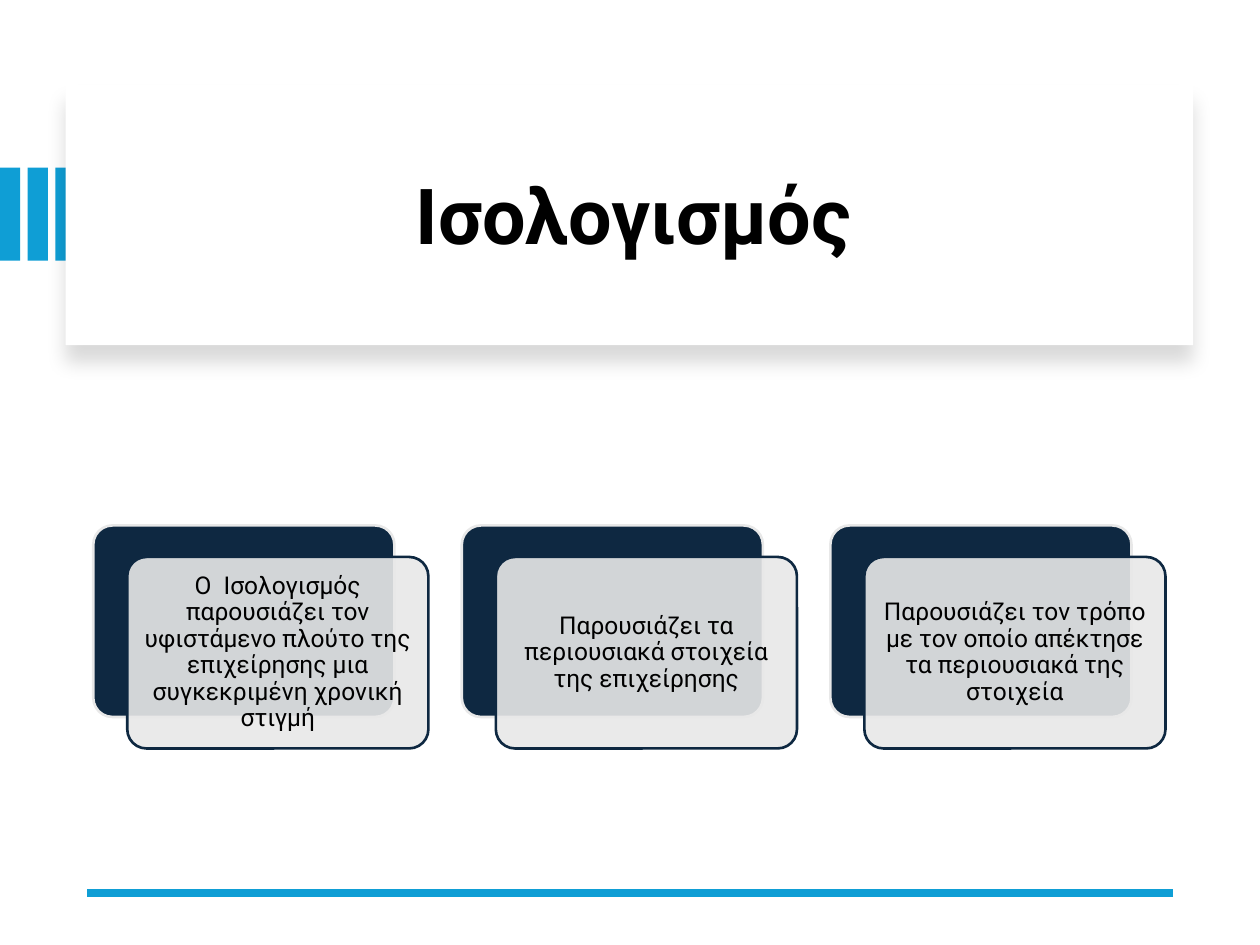
from typing import NamedTuple

from lxml import etree
from pptx import Presentation
from pptx.dml.color import RGBColor
from pptx.enum.shapes import MSO_CONNECTOR, MSO_SHAPE
from pptx.enum.text import MSO_ANCHOR, MSO_AUTO_SIZE, PP_ALIGN
from pptx.oxml.ns import qn
from pptx.util import Inches, Pt

RECT, ROUND = MSO_SHAPE.RECTANGLE, MSO_SHAPE.ROUNDED_RECTANGLE
STRAIGHT = MSO_CONNECTOR.STRAIGHT
MIDDLE, CENTER = MSO_ANCHOR.MIDDLE, PP_ALIGN.CENTER
NO_FIT = MSO_AUTO_SIZE.NONE

FONT = "Roboto"
BLUE, NAVY, GRAY, WHITE, BLACK = "0F9ED5", "0E2841", "E8E8E8", "FFFFFF", "000000"


class Box(NamedTuple):
    left: float
    top: float
    width: float
    height: float

    def shift(self, x: float, y: float = 0) -> "Box":
        return self._replace(left=self.left + x, top=self.top + y)

    def size(self) -> list:
        return [Inches(n) for n in self]


STRIPE = Box(0, 1.33, 0.16, 0.74)
PANEL = Box(0.52, 0.67, 8.95, 2.07)
TITLE = Box(0.86, 0.89, 8.34, 1.7)
CARD = Box(0.74, 4.17, 2.39, 1.52)
STRIPE_STEP, CARD_STEP = 0.22, 2.925
FRONT_X, FRONT_Y = 0.27, 0.25

NOTES = [
    "O  Ισολογισμός παρουσιάζει τον υφιστάμενο πλούτο της επιχείρησης μια συγκεκριμένη χρονική στιγμή",
    "Παρουσιάζει τα περιουσιακά στοιχεία της επιχείρησης",
    "Παρουσιάζει τον τρόπο με τον οποίο απέκτησε τα περιουσιακά της στοιχεία",
]


def rgb(code: str) -> RGBColor:
    return RGBColor.from_string(code)


def add_box(shapes, kind, box: Box, fill: str, line: str = ""):
    shape = shapes.add_shape(kind, *box.size())
    shape.shadow.inherit = False
    shape.fill.solid()
    shape.fill.fore_color.rgb = rgb(fill)
    if line:
        shape.line.color.rgb = rgb(line)
        shape.line.width = Pt(1.5)
    else:
        shape.line.fill.background()
    if kind == ROUND:
        shape.adjustments[0] = 0.1
    return shape


def put_text(shape, text: str, *, size: float, bold: bool = False, inset: float = 0.1) -> None:
    frame = shape.text_frame
    frame.word_wrap = True
    frame.auto_size = NO_FIT
    frame.vertical_anchor = MIDDLE
    frame.margin_left = frame.margin_right = Inches(inset)
    frame.margin_top = frame.margin_bottom = Inches(min(inset, 0.06))
    frame.text = text
    para = frame.paragraphs[0]
    para.alignment = CENTER
    para.line_spacing = 0.9
    font = para.runs[0].font
    font.name, font.size, font.bold = FONT, Pt(size), bold
    font.color.rgb = rgb(BLACK)


def set_alpha(parent, share: int) -> None:
    """Make the colour inside parent opaque by share percent."""
    color = next(parent.iter(qn("a:srgbClr")))
    etree.SubElement(color, qn("a:alpha"), val=str(share * 1000))


def drop_shadow(shape) -> None:
    effects = shape._element.spPr.find(qn("a:effectLst"))
    shadow = etree.SubElement(
        effects, qn("a:outerShdw"), blurRad=str(Pt(11)), dist=str(Pt(10)),
        dir=str(90 * 60000), algn="t", rotWithShape="0")
    etree.SubElement(shadow, qn("a:srgbClr"), val=BLACK)
    set_alpha(shadow, 15)


def add_rule(shapes) -> None:
    y = Inches(7.09)
    rule = shapes.add_connector(STRAIGHT, Inches(9.31), y, Inches(0.69), y)
    rule.line.color.rgb = rgb(BLUE)
    rule.line.width = Pt(4.5)
    etree.SubElement(rule._element.spPr, qn("a:effectLst"))


def add_card(shapes, box: Box, text: str) -> None:
    add_box(shapes, ROUND, box, NAVY, GRAY)
    front = add_box(shapes, ROUND, box.shift(FRONT_X, FRONT_Y), GRAY, NAVY)
    set_alpha(front._element.spPr.find(qn("a:solidFill")), 90)
    put_text(front, text, size=14, inset=0.06)


def main() -> None:
    deck = Presentation()
    deck.slide_width, deck.slide_height = Inches(10), Inches(7.5)
    slide = deck.slides.add_slide(deck.slide_layouts[5])
    shapes = slide.shapes

    stripes = shapes.add_group_shape().shapes
    for i in range(3):
        add_box(stripes, RECT, STRIPE.shift(i * STRIPE_STEP), BLUE)

    panel = add_box(shapes, RECT, PANEL, WHITE)
    drop_shadow(panel)

    title = shapes.title
    title.left, title.top, title.width, title.height = TITLE.size()
    put_text(title, "Ισολογισμός", size=44.1, bold=True)
    panel._element.addnext(title._element)

    add_rule(shapes)
    cards = shapes.add_group_shape().shapes
    for i, note in enumerate(NOTES):
        add_card(cards, CARD.shift(i * CARD_STEP), note)

    deck.save("out.pptx")


if __name__ == "__main__":
    main()
